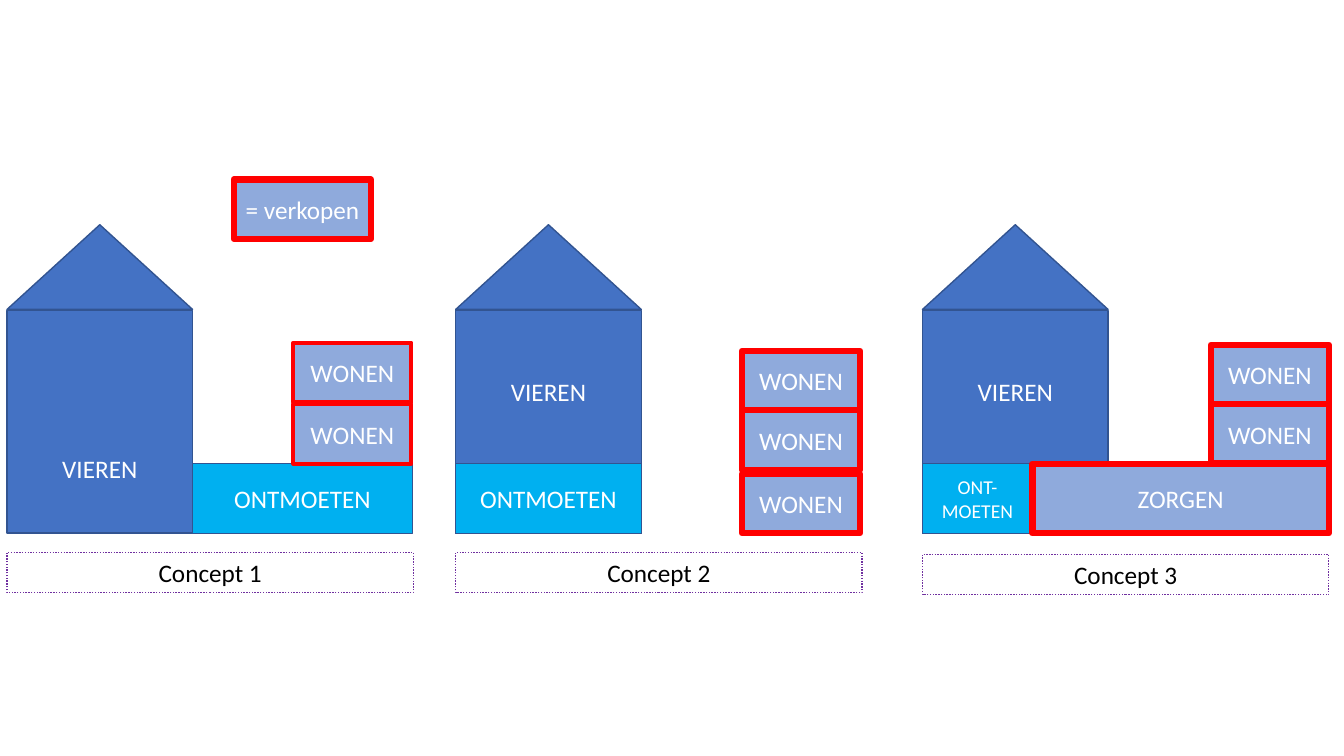
from dataclasses import dataclass

from pptx import Presentation
from pptx.dml.color import RGBColor
from pptx.enum.dml import MSO_LINE
from pptx.enum.shapes import MSO_SHAPE
from pptx.enum.text import MSO_ANCHOR, PP_ALIGN
from pptx.util import Inches, Pt


@dataclass(frozen=True)
class Theme:
    font: str = "Calibri"
    body: float = 18
    small: float = 14
    church: str = "4472C4"
    church_line: str = "325491"
    meeting: str = "00B0F0"
    unit: str = "8FAADC"
    sale: str = "FF0000"
    caption_line: str = "7030A0"
    light: str = "FFFFFF"
    dark: str = "000000"
    thin: float = 1
    medium: float = 3
    thick: float = 4.5


THEME = Theme()

# Shared measures in inches
CHURCH_W = 1.84
WALL_TOP, WALL_H = 3.08, 2.21
ROOF_TOP, ROOF_H = 2.23, 0.84
GROUND_TOP, GROUND_H = 4.6, 0.69
UNIT_W, UNIT_H = 1.17, 0.59
CONCEPT_W, CAPTION_H = 4.03, 0.4
MARGIN = 0.05
TEXT_LINE = 0.305


def add_block(slide, box, fill, line, weight, preset=MSO_SHAPE.RECTANGLE):
    block = slide.shapes.add_shape(preset, *(Inches(length) for length in box))
    block.shadow.inherit = False
    if fill:
        block.fill.solid()
        block.fill.fore_color.rgb = RGBColor.from_string(fill)
    else:
        block.fill.background()
    block.line.color.rgb = RGBColor.from_string(line)
    block.line.width = Pt(weight)
    return block


def add_label(block, text, size=THEME.body, color=THEME.light):
    frame = block.text_frame
    frame.word_wrap = True
    frame.vertical_anchor = MSO_ANCHOR.MIDDLE
    paragraph = frame.paragraphs[0]
    paragraph.alignment = PP_ALIGN.CENTER
    run = paragraph.add_run()
    run.text = text
    run.font.name = THEME.font
    run.font.size = Pt(size)
    run.font.color.rgb = RGBColor.from_string(color)


def add_church(slide, left, lines_above=0, lines_below=0):
    wall = add_block(slide, (left, WALL_TOP, CHURCH_W, WALL_H),
                     THEME.church, THEME.church_line, THEME.thin)
    add_label(wall, "VIEREN")
    # Insets move the label away from the middle of the wall
    wall.text_frame.margin_top = Inches(MARGIN + lines_above * TEXT_LINE)
    wall.text_frame.margin_bottom = Inches(MARGIN + lines_below * TEXT_LINE)
    add_block(slide, (left, ROOF_TOP, CHURCH_W, ROOF_H), THEME.church,
              THEME.church_line, THEME.thin, MSO_SHAPE.ISOSCELES_TRIANGLE)


def add_meeting_room(slide, left, width, text="ONTMOETEN", size=THEME.body):
    room = add_block(slide, (left, GROUND_TOP, width, GROUND_H),
                     THEME.meeting, THEME.church_line, THEME.thin)
    add_label(room, text, size)


def add_for_sale(slide, box, text, weight=THEME.thick):
    add_label(add_block(slide, box, THEME.unit, THEME.sale, weight), text)


def add_homes(slide, left, tops, weight=THEME.thick):
    for top in tops:
        add_for_sale(slide, (left, top, UNIT_W, UNIT_H), "WONEN", weight)


def add_caption(slide, left, top, text):
    caption = add_block(slide, (left, top, CONCEPT_W, CAPTION_H),
                        None, THEME.caption_line, THEME.thin)
    caption.line.dash_style = MSO_LINE.ROUND_DOT
    add_label(caption, text, color=THEME.dark)


def main():
    prs = Presentation()
    prs.slide_width, prs.slide_height = Inches(13.33), Inches(7.5)
    slide = prs.slides.add_slide(prs.slide_layouts[6])
    first, second, third = 0.07, 4.52, 9.15

    # Concept 1: meeting room beside the church, homes on top
    add_church(slide, first, lines_above=3)
    add_meeting_room(slide, first + CHURCH_W, 2.18)
    add_homes(slide, 2.91, (3.4, 4.01), THEME.medium)

    # Concept 2: meeting room inside the church, homes apart
    add_church(slide, second, lines_below=2)
    add_meeting_room(slide, second, CHURCH_W)
    add_homes(slide, 7.36, (3.48, 4.07, 4.7))

    # Concept 3: small meeting room, care wing with homes on top
    add_church(slide, third, lines_below=2)
    add_meeting_room(slide, third, 1.09, "ONT-MOETEN", THEME.small)
    add_homes(slide, 12.01, (3.42, 4.01))
    add_for_sale(slide, (10.24, GROUND_TOP, 2.94, GROUND_H), "ZORGEN")

    # Captions
    captions = ((first, 5.48), (second, 5.48), (third, 5.5))
    for number, (left, top) in enumerate(captions, start=1):
        add_caption(slide, left, top, f"Concept {number}")

    # Legend
    add_for_sale(slide, (2.32, 1.78, 1.36, UNIT_H), "= verkopen")

    prs.save("out.pptx")


if __name__ == "__main__":
    main()
